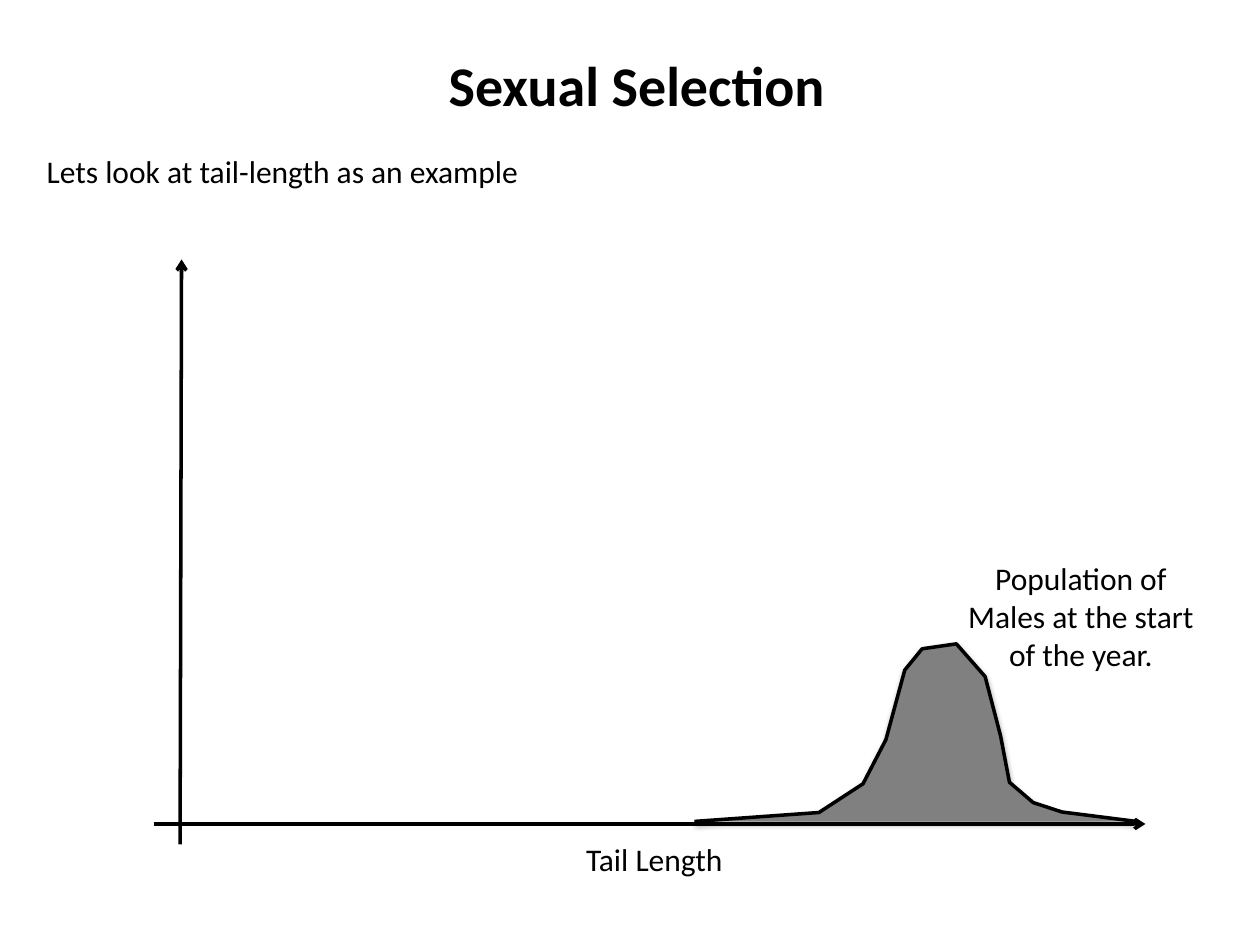
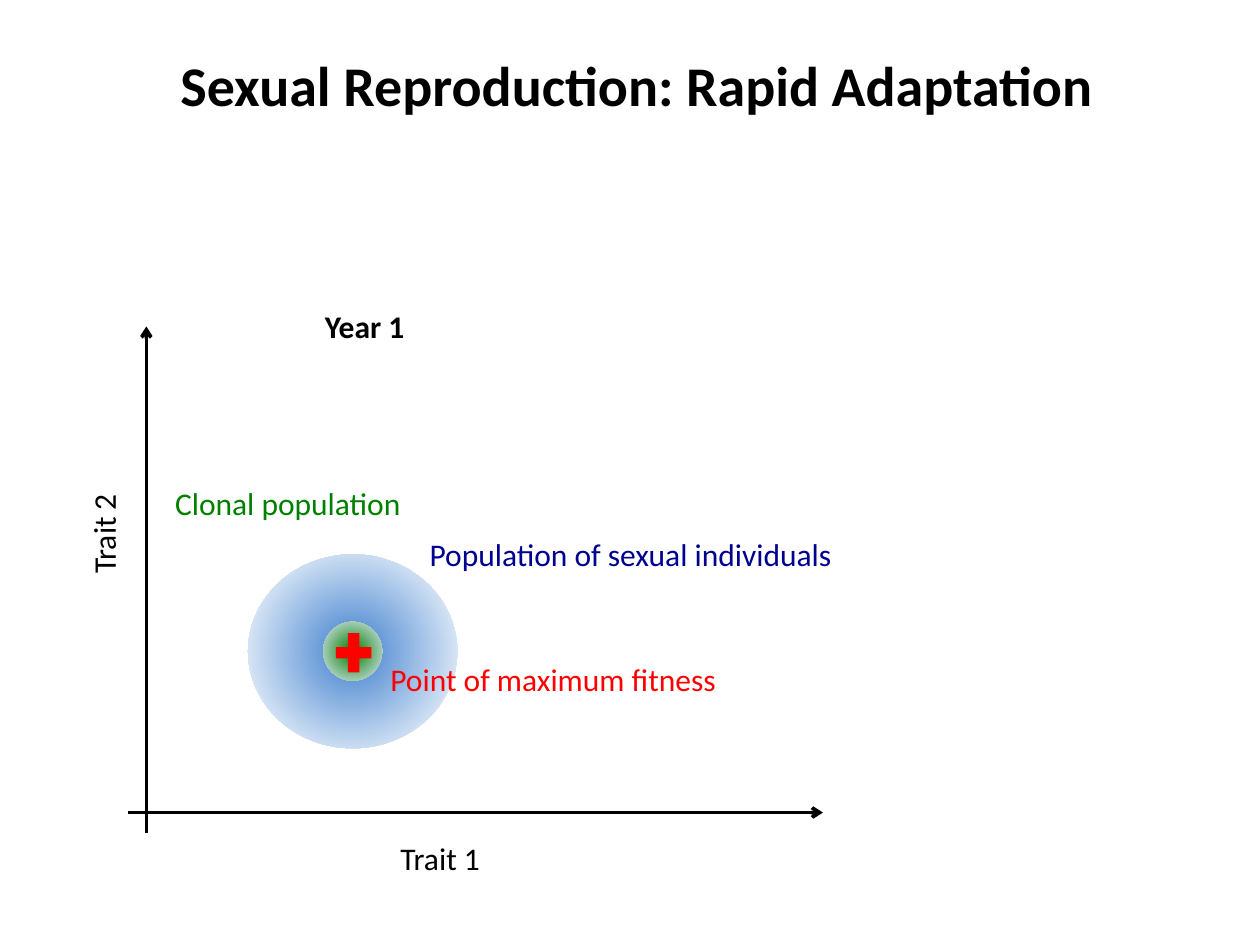
from dataclasses import dataclass

import pptx
import pptx.dml.color
import pptx.enum.shapes
import pptx.enum.text
import pptx.oxml
import pptx.oxml.ns
import pptx.util
from pptx.util import Cm

Align = pptx.enum.text.PP_ALIGN
Shape = pptx.enum.shapes.MSO_SHAPE


@dataclass(frozen=True)
class Theme:
    font: str = "Calibri"
    title_size: int = 32
    body_size: int = 18
    line_width: int = 2
    ink: str = "000000"
    population: str = "808080"
    sexual: str = "3F80CE"
    sexual_edge: str = "FFFFFF"
    sexual_label: str = "000090"
    clonal: str = "008000"
    clonal_edge: str = "DCE6F2"
    fitness: str = "FF0000"


THEME = Theme()


def rgb(value):
    return pptx.dml.color.RGBColor.from_string(value)


def xml(text):
    namespace = pptx.oxml.ns.nsdecls("a")
    return pptx.oxml.parse_xml(text.replace(" NS", " " + namespace, 1))


def add_text(page, text, left, top, width, height=1.02, *, size=THEME.body_size,
             color=THEME.ink, bold=False, align=Align.LEFT, wrap=False, rotation=0):
    box = page.shapes.add_textbox(Cm(left), Cm(top), Cm(width), Cm(height))
    box.rotation = rotation
    frame = box.text_frame
    frame.word_wrap = wrap
    frame.auto_size = pptx.enum.text.MSO_AUTO_SIZE.SHAPE_TO_FIT_TEXT
    para = frame.paragraphs[0]
    para.alignment = align
    span = para.add_run()
    span.text = text
    span.font.name = THEME.font
    span.font.size = pptx.util.Pt(size)
    span.font.bold = bold
    span.font.color.rgb = rgb(color)


def add_page(deck, title):
    page = deck.slides.add_slide(deck.slide_layouts[6])
    add_text(page, title, 2.59, 0.89, 20.5, 1.63, size=THEME.title_size,
             bold=True, align=Align.CENTER, wrap=True)
    return page


def style_line(line):
    line.color.rgb = rgb(THEME.ink)
    line.width = pptx.util.Pt(THEME.line_width)


def add_axis(page, start, end):
    """Draw a line with an open arrowhead at its end."""
    axis = page.shapes.add_connector(
        pptx.enum.shapes.MSO_CONNECTOR.STRAIGHT, *map(Cm, start + end))
    style_line(axis.line)
    axis.line._get_or_add_ln().append(xml('<a:tailEnd NS type="arrow"/>'))
    axis.element.spPr.append(xml("<a:effectLst NS/>"))


def add_distribution(page, points):
    """Draw an open, filled outline with a soft shadow below it."""
    points = [(Cm(x), Cm(y)) for x, y in points]
    builder = page.shapes.build_freeform(*points[0])
    builder.add_line_segments(points[1:], close=False)
    curve = builder.convert_to_shape()
    curve.fill.solid()
    curve.fill.fore_color.rgb = rgb(THEME.population)
    style_line(curve.line)
    curve.element.spPr.append(xml(
        '<a:effectLst NS><a:outerShdw blurRad="40000" dist="20000" dir="5400000"'
        f' rotWithShape="0"><a:srgbClr val="{THEME.ink}"><a:alpha val="38000"/>'
        "</a:srgbClr></a:outerShdw></a:effectLst>"))


def add_centred_shape(page, kind, center, width, height):
    x, y = center
    shape = page.shapes.add_shape(
        kind, Cm(x - width / 2), Cm(y - height / 2), Cm(width), Cm(height))
    shape.shadow.inherit = False
    shape.line.fill.background()
    return shape


def add_population(page, center, width, height, inner, outer):
    """Draw an ellipse that fades from its middle to its rim."""
    cloud = add_centred_shape(page, Shape.OVAL, center, width, height)
    cloud.fill.gradient()
    for stop, color, position in zip(cloud.fill.gradient_stops, (inner, outer), (0, 0.94)):
        stop.color.rgb = rgb(color)
        stop.position = position
    gradient = cloud.element.spPr.find(pptx.oxml.ns.qn("a:gradFill"))
    linear = gradient.find(pptx.oxml.ns.qn("a:lin"))
    gradient.replace(linear, xml(
        '<a:path NS path="circle"><a:fillToRect l="50000" t="50000" r="50000" b="50000"/>'
        "</a:path>"))


def add_optimum(page, center, width, height):
    plus = add_centred_shape(page, Shape.MATH_PLUS, center, width, height)
    plus.fill.solid()
    plus.fill.fore_color.rgb = rgb(THEME.fitness)


def build_selection(deck):
    page = add_page(deck, "Sexual Selection")
    add_text(page, "Lets look at tail-length as an example", 0.69, 2.95, 24.18, wrap=True)
    add_axis(page, (3.63, 17.02), (3.66, 5.23))
    add_axis(page, (3.1, 16.61), (23.09, 16.61))
    add_text(page, "Tail Length", 7.82, 16.81, 10.74, align=Align.CENTER, wrap=True)
    add_distribution(page, [
        (14, 16.56), (16.51, 16.38), (17.4, 15.8), (17.86, 14.91), (18.24, 13.51),
        (18.59, 13.08), (19.28, 12.98), (19.86, 13.64), (20.17, 14.83),
        (20.35, 15.77), (20.83, 16.18), (21.41, 16.37), (22.91, 16.56)])
    add_text(page, "Population of Males at the start of the year.",
             19.1, 11.15, 5.38, 2.57, align=Align.CENTER, wrap=True)


def build_adaptation(deck):
    page = add_page(deck, "Sexual Reproduction: Rapid Adaptation")
    center = (7.11, 13.13)
    add_axis(page, (2.95, 16.79), (2.95, 6.58))
    add_axis(page, (2.59, 16.38), (16.59, 16.38))
    add_population(page, center, 4.22, 3.91, THEME.sexual, THEME.sexual_edge)
    add_population(page, center, 1.19, 1.19, THEME.clonal, THEME.clonal_edge)
    add_optimum(page, (7.13, 13.16), 0.97, 1.07)
    add_text(page, "Trait 1", 7.82, 16.79, 2.13)
    add_text(page, "Trait 2", 1.02, 10.24, 2.13, rotation=270)
    add_text(page, "Point of maximum fitness", 7.62, 13.18, 7.14, color=THEME.fitness)
    add_text(page, "Population of sexual individuals", 8.41, 10.67, 8.71,
             color=THEME.sexual_label)
    add_text(page, "Clonal population", 3.28, 9.63, 5.11, color=THEME.clonal)
    add_text(page, "Year 1", 6.3, 6.07, 2.13, bold=True)


def main():
    deck = pptx.Presentation()
    deck.slide_width, deck.slide_height = Cm(25.4), Cm(19.05)
    build_selection(deck)
    build_adaptation(deck)
    deck.save("out.pptx")


if __name__ == "__main__":
    main()
